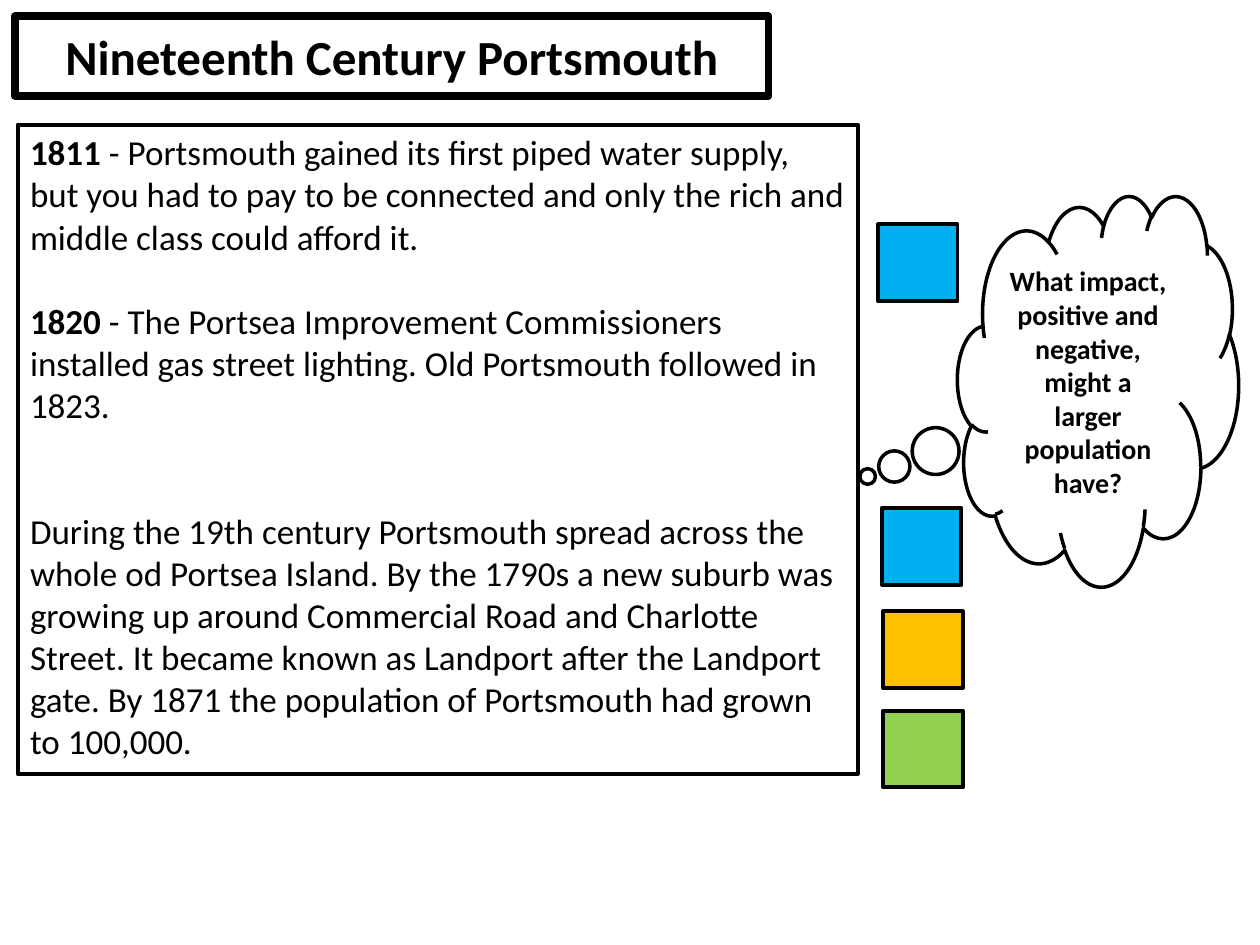
from pptx import Presentation
from pptx.dml.color import RGBColor
from pptx.enum.shapes import MSO_SHAPE
from pptx.enum.text import MSO_ANCHOR, PP_ALIGN
from pptx.util import Pt

RECTANGLE, CLOUD = MSO_SHAPE.RECTANGLE, MSO_SHAPE.CLOUD_CALLOUT
TOP, MIDDLE = MSO_ANCHOR.TOP, MSO_ANCHOR.MIDDLE
LEFT, CENTER = PP_ALIGN.LEFT, PP_ALIGN.CENTER
COLORS = {"black": "000000", "white": "FFFFFF", "blue": "00B0F0",
          "orange": "FFC000", "green": "92D050"}


def add_box(kind, left, top, width, height, fill, line_width):
    shape = slide.shapes.add_shape(kind, Pt(left), Pt(top), Pt(width), Pt(height))
    shape.shadow.inherit = False
    shape.fill.solid()
    shape.fill.fore_color.rgb = RGBColor.from_string(COLORS[fill])
    shape.line.color.rgb = RGBColor.from_string(COLORS["black"])
    shape.line.width = Pt(line_width)
    return shape


def write(shape, paragraphs, size, alignment, anchor):
    """Each paragraph is (space before, bold text, regular text)."""
    frame = shape.text_frame
    frame.word_wrap = True
    frame.vertical_anchor = anchor
    for index, (space, bold_text, regular_text) in enumerate(paragraphs):
        paragraph = frame.add_paragraph() if index else frame.paragraphs[0]
        paragraph.alignment = alignment
        paragraph.space_before = Pt(space)
        for text, bold in ((bold_text, True), (regular_text, False)):
            if text:
                run = paragraph.add_run()
                run.text = text
                run.font.name = "Calibri"
                run.font.size = Pt(size)
                run.font.bold = bold
                run.font.color.rgb = RGBColor.from_string(COLORS["black"])


presentation = Presentation()
presentation.slide_width, presentation.slide_height = Pt(720), Pt(540)
slide = presentation.slides.add_slide(presentation.slide_layouts[6])

# Title
title = add_box(RECTANGLE, 8.6, 9.4, 430.6, 45.4, "white", 4.5)
write(title, [(0, "Nineteenth Century Portsmouth", "")], 28, CENTER, MIDDLE)

# Timeline, with gaps of one and two lines
LINE = 24
timeline = add_box(RECTANGLE, 10.1, 71.3, 480.2, 370.8, "white", 2.25)
write(timeline, [
    (0, "1811", " - Portsmouth gained its first piped water supply, but you had to pay "
     "to be connected and only the rich and middle class could afford it."),
    (LINE, "1820", " - The Portsea Improvement Commissioners installed gas street "
     "lighting. Old Portsmouth followed in 1823."),
    (2 * LINE, "", "During the 19th century Portsmouth spread across the whole od Portsea "
     "Island. By the 1790s a new suburb was growing up around Commercial Road and "
     "Charlotte Street. It became known as Landport after the Landport gate. By 1871 "
     "the population of Portsmouth had grown to 100,000."),
], 20, LEFT, TOP)

# Colour-coded squares beside the timeline
for left, top, color in ((501.8, 128.2, "blue"), (504, 290.2, "blue"),
                         (504.7, 349.2, "orange"), (504.7, 406.1, "green")):
    add_box(RECTANGLE, left, top, 45.4, 43.9, color, 2.25)

# Question in a thought cloud
cloud = add_box(CLOUD, 547.2, 111.6, 160.6, 223.2, "white", 2)
cloud.adjustments[0], cloud.adjustments[1] = -0.82, 0.22
write(cloud, [(0, "What impact, positive and negative, might a larger population have?", "")],
      16, CENTER, MIDDLE)

presentation.save("out.pptx")
